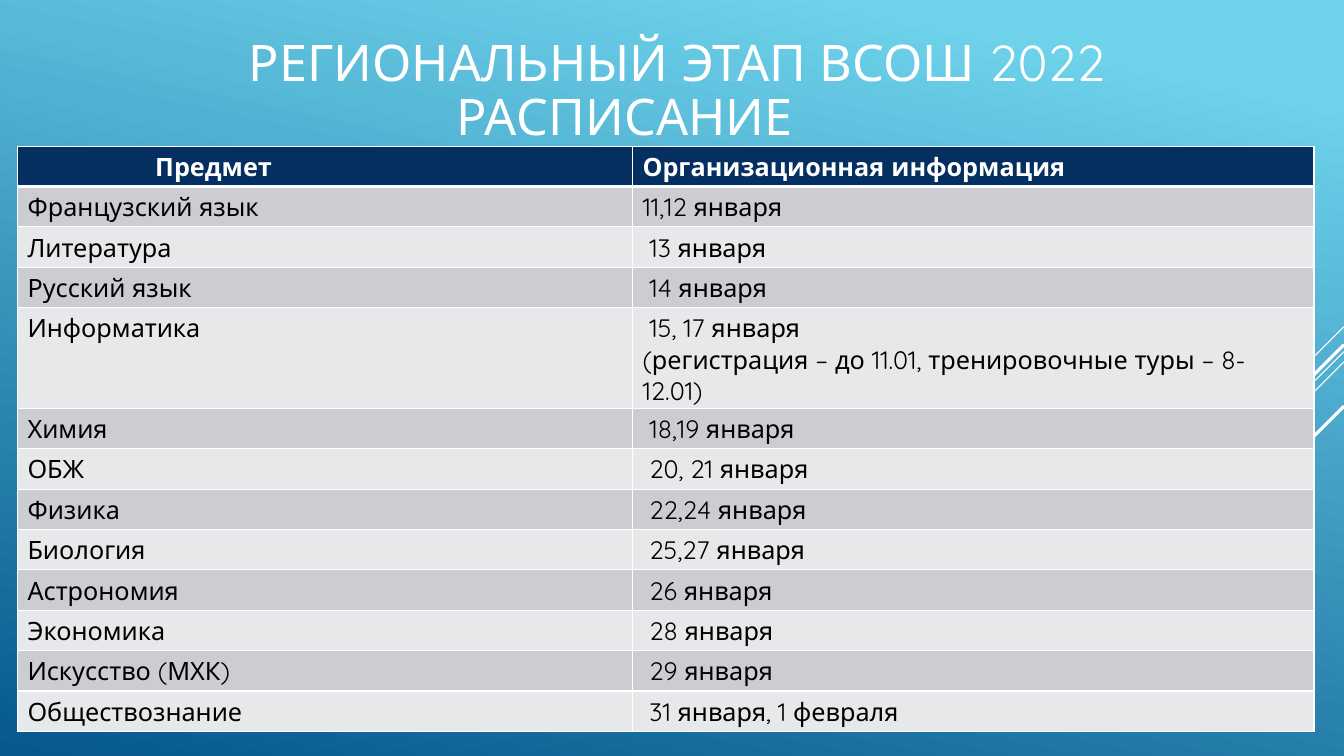
"""Builds a one-slide timetable of the regional olympiad stage."""
import pptx
import pptx.util
import pptx.dml.color
import pptx.enum.shapes
import pptx.enum.text
import pptx.oxml
import pptx.oxml.ns

Color = pptx.dml.color.RGBColor
WHITE = Color(0xFF, 0xFF, 0xFF)
BLACK = Color(0x00, 0x00, 0x00)
NAVY = Color(0x05, 0x2F, 0x61)
GREY = Color(0xCC, 0xCD, 0xD2)
PALE = Color(0xE7, 0xE8, 0xEA)
SKY = Color(0x6E, 0xD2, 0xEB)
DEEP = Color(0x06, 0x58, 0x8E)

TITLE = [("РЕГИОНАЛЬНЫЙ ЭТАП ВСОШ 2022", 0), ("РАСПИСАНИЕ", 15.45)]
HEAD = ("Предмет", "Организационная информация")
DATES = [
    ("Французский язык", "11,12 января"),
    ("Литература", " 13 января"),
    ("Русский язык", " 14 января"),
    ("Информатика", " 15, 17 января",
     "(регистрация – до 11.01, тренировочные туры – 8-12.01)"),
    ("Химия", " 18,19 января"),
    ("ОБЖ", " 20, 21 января"),
    ("Физика", " 22,24 января"),
    ("Биология", " 25,27 января"),
    ("Астрономия", " 26 января"),
    ("Экономика", " 28 января"),
    ("Искусство (МХК)", " 29 января"),
    ("Обществознание", " 31 января, 1 февраля"),
]
RAYS = [(43.2, 7.5, 0.75), (46.53, 24.46, 0.75), (47.87, 15.53, 0.75),
        (45.6, 14.33, 2.25), (53.73, 10.43, 2.25)]


class Deck:
    """Holds the style and current slide; lengths are percent of its size."""

    font = "Quicksand"

    def __init__(self):
        self.file = pptx.Presentation()
        self.file.slide_width = pptx.util.Inches(13.33)
        self.file.slide_height = pptx.util.Inches(7.5)
        self.slide = self.file.slides.add_slide(self.file.slide_layouts[6])

    def wide(self, part):
        return round(self.file.slide_width * part / 100)

    def high(self, part):
        return round(self.file.slide_height * part / 100)

    def ground(self, top, base, turn):
        fill = self.slide.background.fill
        fill.gradient()
        fill.gradient_angle = 360 - turn
        for stop, color, place in zip(fill.gradient_stops, (top, base), (0.1, 1)):
            stop.color.rgb = color
            stop.position = place

    def ray(self, top, run, weight):
        right, start, span = self.wide(100), self.high(top), self.wide(run)
        line = self.slide.shapes.add_connector(
            pptx.enum.shapes.MSO_CONNECTOR.STRAIGHT,
            right, start, right - span, start + span)
        line.line.color.rgb = WHITE
        line.line.width = pptx.util.Pt(weight)
        line._element.spPr.append(pptx.oxml.parse_xml(
            f"<a:effectLst {pptx.oxml.ns.nsdecls('a')}/>"))

    def text(self, frame, lines, size, color, bold=False, space=None):
        for spot, (words, indent) in enumerate(lines):
            para = frame.add_paragraph() if spot else frame.paragraphs[0]
            para.alignment = pptx.enum.text.PP_ALIGN.LEFT
            para.line_spacing = space
            if indent:
                para._p.get_or_add_pPr().set("marL", str(self.wide(indent)))
            run = para.add_run()
            run.text = words
            run.font.name = self.font
            run.font.size = pptx.util.Pt(size)
            run.font.bold = bold
            run.font.color.rgb = color

    def title(self, left, top, width, height, lines):
        box = self.slide.shapes.add_textbox(
            self.wide(left), self.high(top), self.wide(width), self.high(height))
        frame = box.text_frame
        frame.word_wrap = True
        frame.vertical_anchor = pptx.enum.text.MSO_ANCHOR.MIDDLE
        self.text(frame, lines, 36, WHITE, space=0.9)

    def cell(self, cell, lines, fill, color, bold, above, below):
        props = cell._tc.get_or_add_tcPr()
        for side, weight in zip("LRTB", (1, 1, above, below)):
            props.append(pptx.oxml.parse_xml(
                f"<a:ln{side} {pptx.oxml.ns.nsdecls('a')} w='{pptx.util.Pt(weight)}'>"
                f"<a:solidFill><a:srgbClr val='{WHITE}'/></a:solidFill></a:ln{side}>"))
        cell.fill.solid()
        cell.fill.fore_color.rgb = fill
        self.text(cell.text_frame, lines, 18, color, bold)

    def table(self, left, top, widths, height, head, body):
        rows = [head] + body
        table = self.slide.shapes.add_table(
            len(rows), len(widths), self.wide(left), self.high(top),
            self.wide(sum(widths)), self.high(height) * len(rows)).table
        table.first_row = table.horz_banding = False
        for col, width in zip(table.columns, widths):
            col.width = self.wide(width)
        for at, (name, *notes) in enumerate(rows):
            table.rows[at].height = self.high(height)
            first = at == 0
            fill = NAVY if first else GREY if at % 2 else PALE
            color = WHITE if first else BLACK
            above, below = 3 if at == 1 else 1, 3 if first else 1
            pair = ([(name, 9.5 if first else 0)], [(note, 0) for note in notes])
            for col, lines in enumerate(pair):
                self.cell(table.cell(at, col), lines, fill, color, first, above, below)


def main():
    deck = Deck()
    deck.ground(SKY, DEEP, 102)
    for ray in RAYS:
        deck.ray(*ray)
    deck.title(17.78, 3.2, 70, 18, TITLE)
    deck.table(1.3, 19.33, (45.76, 50.71), 5.2, HEAD, DATES)
    deck.file.save("out.pptx")


if __name__ == "__main__":
    main()
